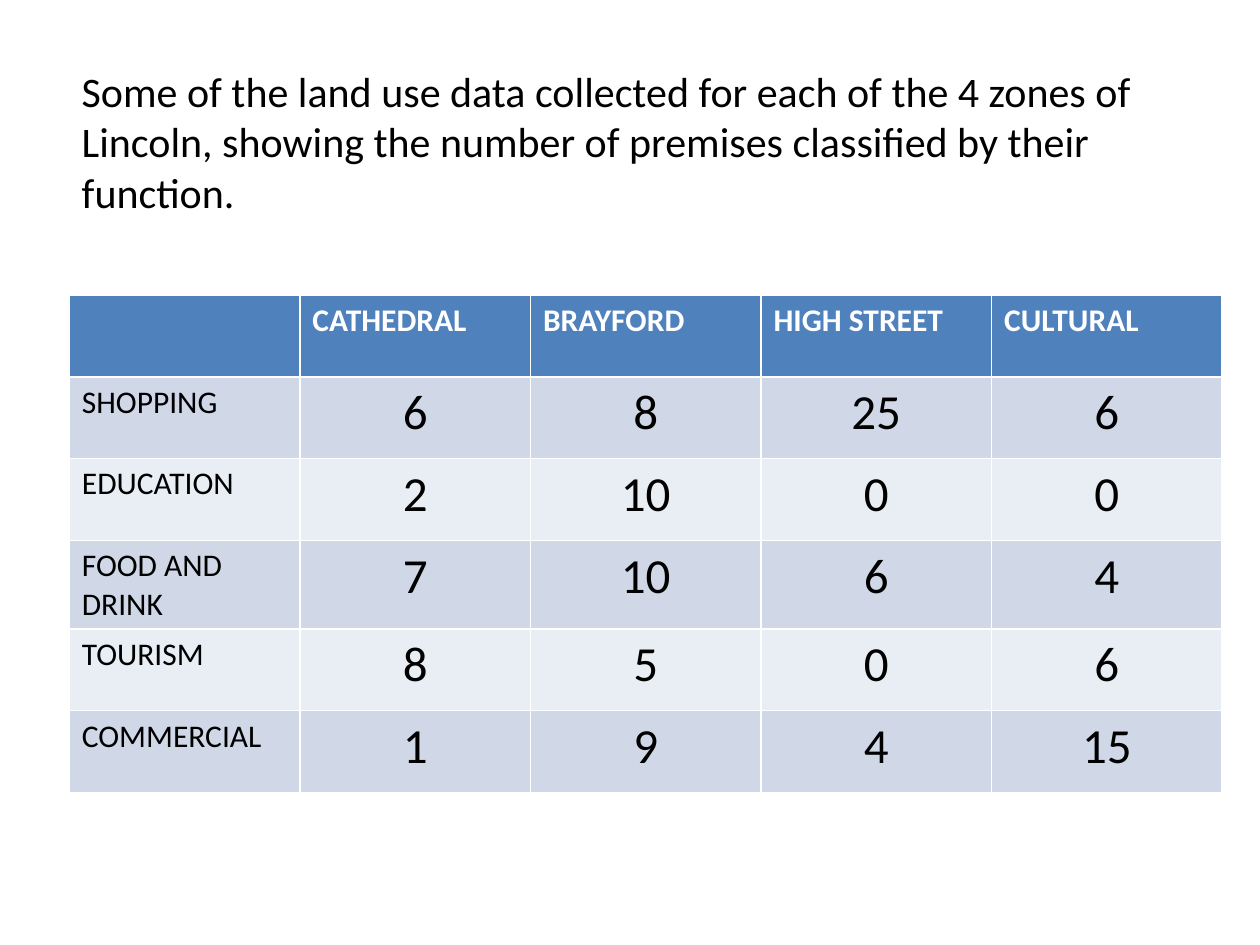
from pptx import Presentation
from pptx.dml.color import RGBColor
from pptx.enum.text import PP_ALIGN
from pptx.util import Inches, Pt

LEFT, CENTER = PP_ALIGN.LEFT, PP_ALIGN.CENTER
BLACK = RGBColor(0x00, 0x00, 0x00)
WHITE = RGBColor(0xFF, 0xFF, 0xFF)
BLUE = RGBColor(0x4F, 0x81, 0xBD)
BANDS = [RGBColor(0xD0, 0xD8, 0xE8), RGBColor(0xE9, 0xED, 0xF4)]
FONT = "Calibri"

# Content
INTRO = ("Some of the land use data collected for each of the 4 zones of "
         "Lincoln, showing the number of premises classified by their function.")
ZONES = ["", "CATHEDRAL", "BRAYFORD", "HIGH STREET", "CULTURAL"]
COUNTS = [
    ("SHOPPING", 6, 8, 25, 6),
    ("EDUCATION", 2, 10, 0, 0),
    ("FOOD AND DRINK", 7, 10, 6, 4),
    ("TOURISM", 8, 5, 0, 6),
    ("COMMERCIAL", 1, 9, 4, 15),
]

# Layout
EDGE = 0.55
COL_W, ROW_H = 1.83, 0.65


def write(frame, text, size=18, color=BLACK, bold=False, align=LEFT):
    para = frame.paragraphs[0]
    para.alignment = align
    if text:
        run = para.add_run()
        run.text = text
        font = run.font
    else:
        font = para.font
    font.name, font.size, font.bold = FONT, Pt(size), bold
    font.color.rgb = color


def fill(cell, color):
    cell.fill.solid()
    cell.fill.fore_color.rgb = color


deck = Presentation()
deck.slide_width, deck.slide_height = Inches(10), Inches(7.5)
slide = deck.slides.add_slide(deck.slide_layouts[6])

# Introduction
box = slide.shapes.add_textbox(Inches(EDGE), Inches(0.47), Inches(8.75), Inches(1.31))
box.text_frame.word_wrap = True
write(box.text_frame, INTRO, size=24)

# Land use table; the default table style draws the white rules
rows, cols = len(COUNTS) + 1, len(ZONES)
table = slide.shapes.add_table(rows, cols, Inches(EDGE), Inches(2.34),
                               Inches(cols * COL_W), Inches(rows * ROW_H)).table
for col in table.columns:
    col.width = Inches(COL_W)
for row in table.rows:
    row.height = Inches(ROW_H)

for c, zone in enumerate(ZONES):
    cell = table.cell(0, c)
    fill(cell, BLUE)
    write(cell.text_frame, zone, color=WHITE, bold=True)

for r, (use, *counts) in enumerate(COUNTS, 1):
    for c, value in enumerate([use, *counts]):
        cell = table.cell(r, c)
        fill(cell, BANDS[(r - 1) % 2])
        if c == 0:
            write(cell.text_frame, value)
        else:
            write(cell.text_frame, str(value), size=28, align=CENTER)

deck.save("out.pptx")
